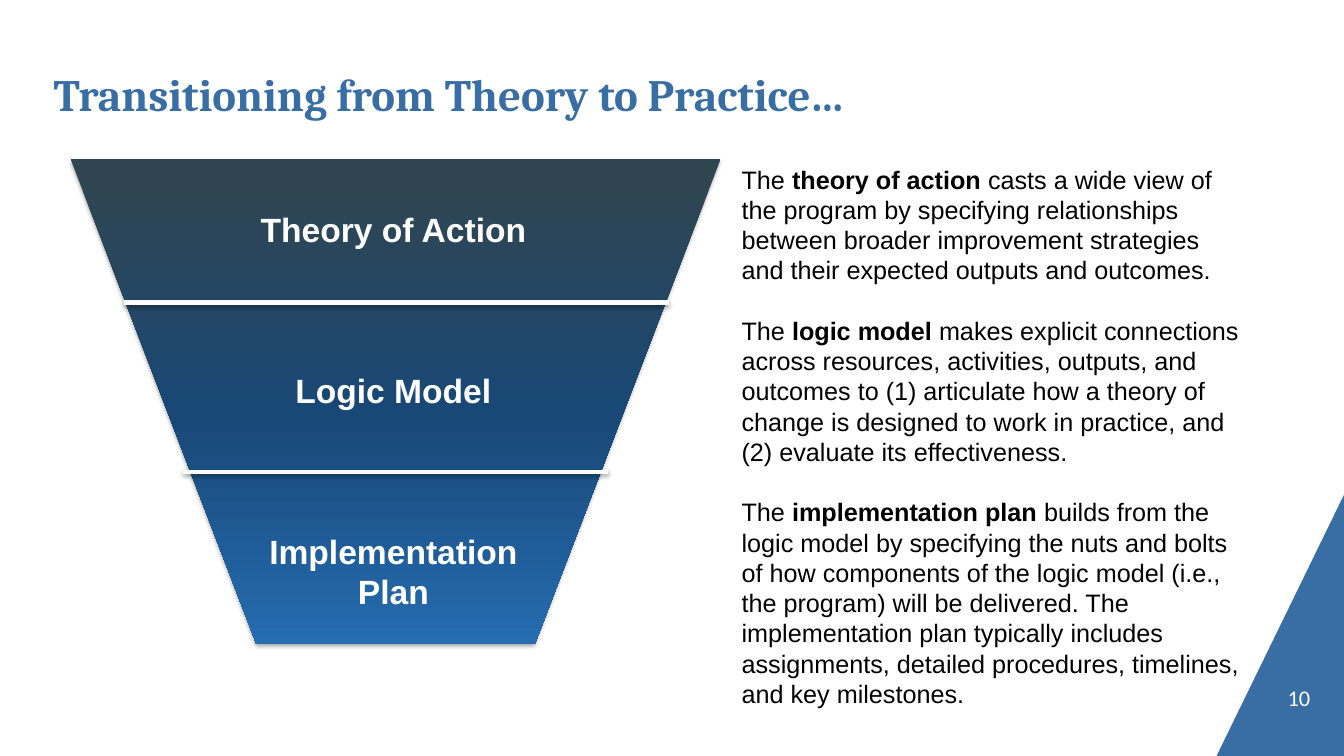
from dataclasses import dataclass

from lxml import etree
from pptx import Presentation
from pptx import util as u
from pptx.dml.color import RGBColor
from pptx.enum import shapes, text
from pptx.oxml import ns, parse_xml

COLORS = {
    "accent": "386EA3", "white": "FFFFFF", "black": "000000",
    "slate": "2F4550", "navy": "194876", "blue": "256CB1",
}
W, H = 33.87, 19.05
NSDECL = ns.nsdecls("a")


@dataclass
class Run:
    text: str
    bold: bool = False


@dataclass
class TextBlock:
    box: tuple[float, float, float, float]
    paragraphs: list[list[Run]]
    font: dict
    align: text.PP_ALIGN = text.PP_ALIGN.LEFT
    anchor: text.MSO_ANCHOR = text.MSO_ANCHOR.TOP
    gap: float = 0
    inset: bool = False


@dataclass
class Divider:
    left: float
    right: float
    y: float


def rgb(name: str) -> RGBColor:
    return RGBColor.from_string(COLORS[name])


def style(name: str, size: float, color: str) -> dict:
    return {"name": name, "size": u.Pt(size), "color": color}


def set_font(font, fmt: dict, bold: bool) -> None:
    for key, value in {**fmt, "bold": bold}.items():
        if key == "color":
            font.color.rgb = rgb(value)
        else:
            setattr(font, key, value)


def add_text(parent, block: TextBlock) -> None:
    sp = parent.add_textbox(*map(u.Cm, block.box))
    tf = sp.text_frame
    tf.word_wrap = True
    tf.vertical_anchor = block.anchor
    if not block.inset:
        for side in ("left", "top", "right", "bottom"):
            setattr(tf, f"margin_{side}", 0)
    for i, runs in enumerate(block.paragraphs):
        p = tf.add_paragraph() if i else tf.paragraphs[0]
        p.alignment = block.align
        if i and block.gap:
            p.space_before = u.Pt(block.gap)
        for run in runs:
            r = p.add_run()
            r.text = run.text
            set_font(r.font, block.font, run.bold)


def add_shadow(sp) -> None:
    sp._element.spPr.append(parse_xml(
        f'<a:effectLst {NSDECL}><a:outerShdw blurRad="{u.Pt(3.1)}" dist="{u.Pt(1.8)}" '
        f'dir="5400000" rotWithShape="0"><a:srgbClr val="{COLORS["black"]}">'
        '<a:alpha val="35000"/></a:srgbClr></a:outerShdw></a:effectLst>'))


def set_gradient(sp, stops: list[tuple[int, str]]) -> None:
    sp.fill.gradient()
    sp.fill.gradient_angle = 90
    gs_list = sp._element.spPr.find(ns.qn("a:gradFill")).find(ns.qn("a:gsLst"))
    for gs in list(gs_list):
        gs_list.remove(gs)
    for percent, name in stops:
        gs = etree.SubElement(gs_list, ns.qn("a:gs"), pos=str(percent * 1000))
        etree.SubElement(gs, ns.qn("a:srgbClr"), val=COLORS[name])


def add_divider(parent, line: Divider) -> None:
    cxn = parent.add_connector(
        shapes.MSO_CONNECTOR.STRAIGHT,
        u.Cm(line.left), u.Cm(line.y), u.Cm(line.right), u.Cm(line.y))
    cxn.line.color.rgb = rgb("white")
    cxn.line.width = u.Pt(3)
    add_shadow(cxn)


def add_corner(parent) -> None:
    builder = parent.build_freeform(u.Cm(W), u.Cm(12.47))
    builder.add_line_segments([(u.Cm(30.66), u.Cm(H)), (u.Cm(W), u.Cm(H))])
    sp = builder.convert_to_shape()
    sp.shadow.inherit = False
    sp.fill.solid()
    sp.fill.fore_color.rgb = rgb("accent")
    sp.line.fill.background()


def add_funnel(parent) -> None:
    group = parent.add_group_shape().shapes
    sp = group.add_shape(shapes.MSO_SHAPE.TRAPEZOID, *map(u.Cm, (1.78, 4.01, 16.38, 12.22)))
    sp.rotation = 180
    sp.adjustments[0] = 0.383
    set_gradient(sp, [(4, "slate"), (53, "navy"), (100, "blue")])
    sp.line.fill.background()
    add_shadow(sp)
    for line in DIVIDERS:
        add_divider(group, line)
    add_text(group, LEVELS)


# Content
DIVIDERS = [Divider(3.12, 16.87, 7.62), Divider(4.62, 15.32, 11.89)]
LEVELS = TextBlock(
    (6.27, 5.13, 7.29, 10.52),
    [[Run(name, True)] for name in ("Theory of Action", "Logic Model", "Implementation Plan")],
    style("Arial", 24, "white"), text.PP_ALIGN.CENTER, gap=86.4, inset=True)
TITLE = TextBlock(
    (1.35, 1.68, 27.86, 1.37), [[Run("Transitioning from Theory to Practice…", True)]],
    style("Cambria", 32, "accent"), anchor=text.MSO_ANCHOR.MIDDLE)
BODY = TextBlock(
    (18.44, 4.01, 13.03, 14.1),
    [[Run("The "), Run(term + " ", True), Run(rest)] for term, rest in (
        ("theory of action",
         "casts a wide view of the program by specifying relationships between broader "
         "improvement strategies and their expected outputs and outcomes."),
        ("logic model",
         "makes explicit connections across resources, activities, outputs, and outcomes to "
         "(1) articulate how a theory of change is designed to work in practice, and "
         "(2) evaluate its effectiveness."),
        ("implementation plan",
         "builds from the logic model by specifying the nuts and bolts of how components of "
         "the logic model (i.e., the program) will be delivered. The implementation plan "
         "typically includes assignments, detailed procedures, timelines, and key milestones."),
    )],
    style("Arial", 18, "black"), gap=21.6, inset=True)
PAGE_NUMBER = TextBlock(
    (30.51, 17.15, 2.51, 0.76), [[Run("10")]], style("Calibri", 16, "white"),
    text.PP_ALIGN.RIGHT, text.MSO_ANCHOR.BOTTOM)


def main() -> None:
    prs = Presentation()
    prs.slide_width, prs.slide_height = u.Cm(W), u.Cm(H)
    s = prs.slides.add_slide(prs.slide_layouts[6])

    # Corner, title and explanations
    add_corner(s.shapes)
    for block in (TITLE, PAGE_NUMBER, BODY):
        add_text(s.shapes, block)

    # Funnel from theory to practice
    add_funnel(s.shapes)
    prs.save("out.pptx")


if __name__ == "__main__":
    main()
